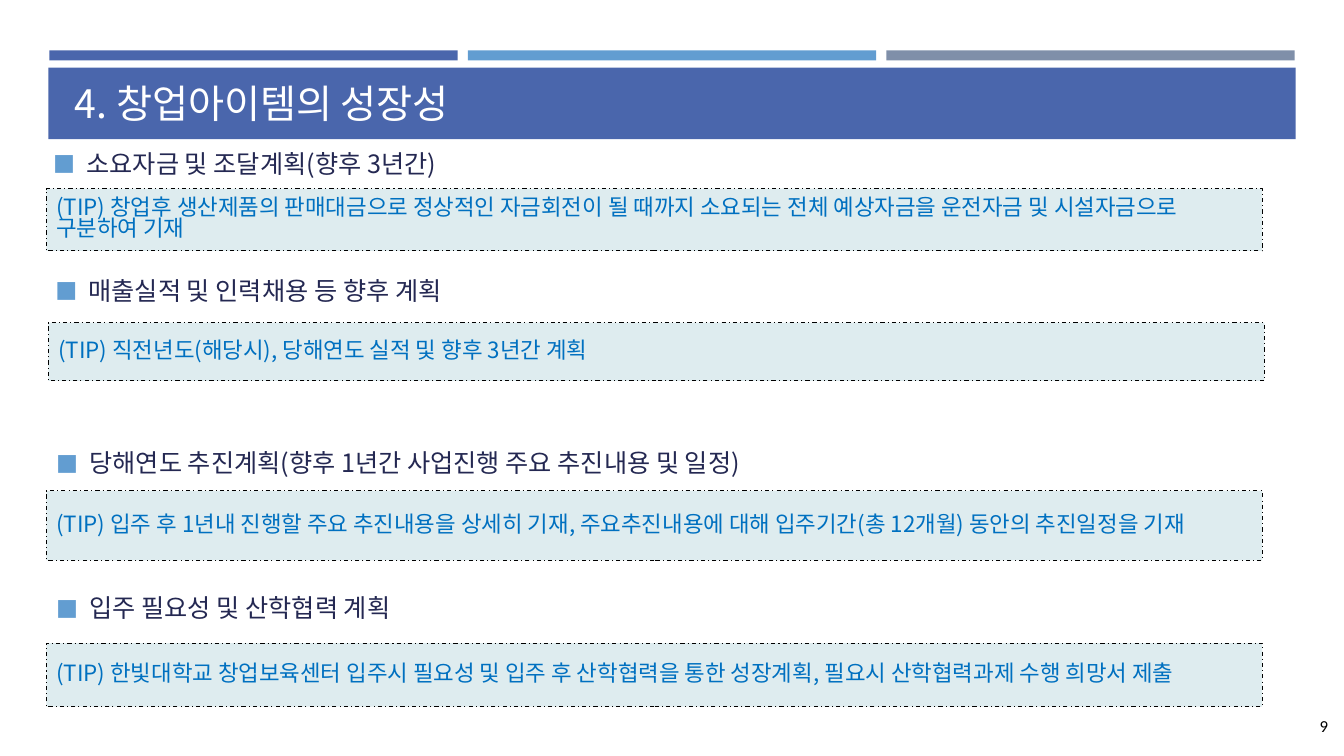
"""Build the slide on the growth prospects of the start-up item."""
from lxml.etree import SubElement
from pptx import Presentation
from pptx.dml.color import RGBColor
from pptx.enum.dml import MSO_LINE
from pptx.enum.shapes import MSO_SHAPE
from pptx.enum.text import MSO_ANCHOR, PP_ALIGN
from pptx.oxml.ns import qn
from pptx.util import Inches, Pt

COLORS = {"blue": "4A66AC", "sky": "629DD1", "gray": "7F8FA9", "tip": "DEECEF",
          "tip_text": "0070C0", "heading": "242852", "black": "000000", "white": "FFFFFF"}
KOREAN = "Noto Sans CJK KR"


def add_block(page, left, top, width, height, fill):
    block = page.shapes.add_shape(MSO_SHAPE.RECTANGLE, Inches(left), Inches(top),
                                  Inches(width), Inches(height))
    block.shadow.inherit = False
    block.fill.solid()
    block.fill.fore_color.rgb = RGBColor.from_string(COLORS[fill])
    block.line.fill.background()
    return block


def write(box, text, size, color, font=KOREAN, **paragraph_format):
    frame = box.text_frame
    frame.word_wrap = True
    frame.vertical_anchor = MSO_ANCHOR.MIDDLE
    para = frame.paragraphs[0]
    for name, value in ({"alignment": PP_ALIGN.LEFT} | paragraph_format).items():
        setattr(para, name, value)
    span = para.add_run()
    span.text = text
    for name, value in {"size": Pt(size), "name": font, "bold": False}.items():
        setattr(span.font, name, value)
    span.font.color.rgb = RGBColor.from_string(COLORS[color])
    SubElement(span.font._element, qn("a:ea"), typeface=font)
    return para


deck = Presentation()
deck.slide_width, deck.slide_height = Inches(13.33), Inches(7.5)
page = deck.slides.add_slide(deck.slide_layouts[5])

for column, color in enumerate(("blue", "sky", "gray")):
    add_block(page, 0.49 + 4.15 * column, 0.5, 4.05, 0.1, color)
add_block(page, 0.48, 0.67, 12.37, 0.71, "blue")

title = page.shapes.title
page.shapes._spTree.append(title._element)
for name, value in {"left": 0.64, "top": 0.72, "width": 12.06, "height": 0.6}.items():
    setattr(title, name, Inches(value))
write(title, "4. 창업아이템의 성장성", 28, "white")

SECTIONS = [
    ("소요자금 및 조달계획(향후 3년간)", 0.43, 1.39,
     "(TIP) 창업후 생산제품의 판매대금으로 정상적인 자금회전이 될 때까지 소요되는 "
     "전체 예상자금을 운전자금 및 시설자금으로 구분하여 기재", 0.46, 1.87, 0.62),
    ("매출실적 및 인력채용 등 향후 계획", 0.45, 2.65,
     "(TIP) 직전년도(해당시), 당해연도 실적 및 향후 3년간 계획", 0.48, 3.2, 0.58),
    ("당해연도 추진계획(향후 1년간 사업진행 주요 추진내용 및 일정)", 0.46, 4.36,
     "(TIP) 입주 후 1년내 진행할 주요 추진내용을 상세히 기재, 주요추진내용에 대해 "
     "입주기간(총 12개월) 동안의 추진일정을 기재", 0.46, 4.87, 0.69),
    ("입주 필요성 및 산학협력 계획", 0.46, 5.8,
     "(TIP) 한빛대학교 창업보육센터 입주시 필요성 및 입주 후 산학협력을 통한 성장계획, "
     "필요시 산학협력과제 수행 희망서 제출", 0.46, 6.38, 0.63),
]
SPACING = {"space_before": Pt(3), "space_after": Pt(6), "line_spacing": 0.8}

for heading, heading_left, heading_top, tip, tip_left, tip_top, tip_height in SECTIONS:
    tip_box = add_block(page, tip_left, tip_top, 12.06, tip_height, "tip")
    tip_box.line.color.rgb = RGBColor.from_string(COLORS["black"])
    tip_box.line.width = Pt(0.75)
    tip_box.line.dash_style = MSO_LINE.DASH_DOT
    write(tip_box, tip, 16, "tip_text", **SPACING)

    heading_box = page.shapes.add_textbox(Inches(heading_left), Inches(heading_top),
                                          Inches(12.06), Inches(0.51))
    para = write(heading_box, heading, 18, "heading", **SPACING)
    properties = para._p.get_or_add_pPr()
    properties.set("marL", str(Inches(0.33)))
    properties.set("indent", str(-Inches(0.33)))
    bullet_color = SubElement(properties, qn("a:buClr"))
    SubElement(bullet_color, qn("a:srgbClr"), val=COLORS["sky"])
    SubElement(properties, qn("a:buSzPct"), val="92000")
    SubElement(properties, qn("a:buFont"), typeface="Calibri")
    SubElement(properties, qn("a:buChar"), char="■")

number_box = page.shapes.add_textbox(Inches(12.12), Inches(7), Inches(1.15), Inches(0.4))
write(number_box, "9", 12, "black", "Calibri", alignment=PP_ALIGN.RIGHT)

deck.save("out.pptx")
